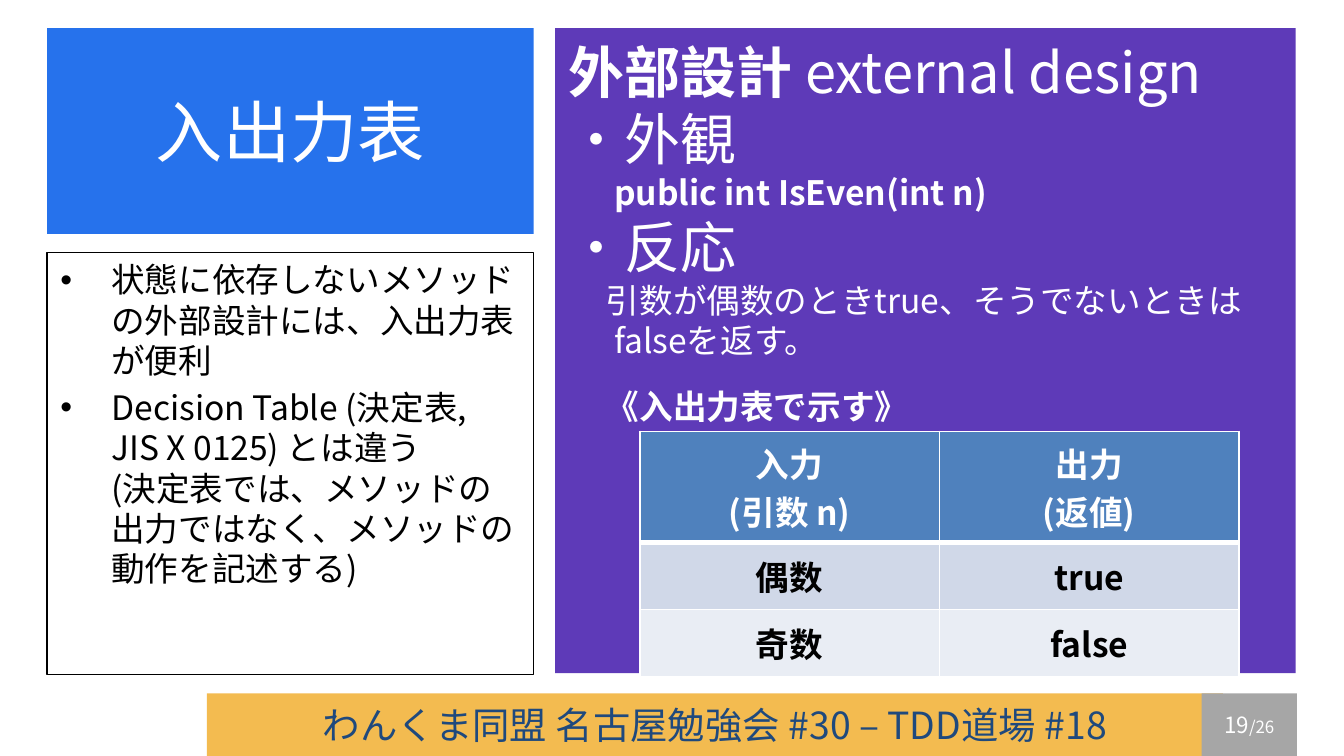
from dataclasses import dataclass
from typing import Any

from lxml.etree import SubElement
from pptx import Presentation
from pptx.dml.color import RGBColor
from pptx.enum.shapes import MSO_SHAPE as Kind
from pptx.enum.text import MSO_ANCHOR as Anchor, MSO_AUTO_SIZE as Fit, PP_ALIGN as Align
from pptx.oxml.ns import qn
from pptx.util import Inches, Pt

WHITE = RGBColor(0xFF, 0xFF, 0xFF)
BLACK = RGBColor(0x00, 0x00, 0x00)
NAVY = RGBColor(0x1F, 0x49, 0x7D)
BLUE = RGBColor(0x26, 0x72, 0xEC)
PURPLE = RGBColor(0x5E, 0x3A, 0xB8)
AMBER = RGBColor(0xF3, 0xBB, 0x50)
GREY = RGBColor(0xA6, 0xA6, 0xA6)
STEEL = RGBColor(0x4F, 0x81, 0xBD)
PALE = RGBColor(0xD0, 0xD8, 0xE8)
LIGHT = RGBColor(0xE9, 0xED, 0xF4)

MID = {"alignment": Align.CENTER}
LEFT = {"alignment": Align.LEFT}


def apply(item, style):
    for key, value in style.items():
        setattr(item, key, value)


def fill(item, color):
    item.fill.solid()
    item.fill.fore_color.rgb = color


@dataclass
class Page:
    slide: Any
    font: str = "Noto Sans CJK JP"

    def run(self, para, text, size, color, bold=False):
        for i, line in enumerate(text.split("\n")):
            if i:
                para.add_line_break()
            run = para.add_run()
            run.text = line
            apply(run.font, {"name": self.font, "size": Pt(size), "bold": bold})
            run.font.color.rgb = color
            SubElement(run.font._element, qn("a:ea"), typeface=self.font)

    def para(self, frame, runs, color, style, left=0, bullet=False):
        first = frame.paragraphs[0]
        para = frame.add_paragraph() if first.runs else first
        props = para._p.get_or_add_pPr()
        if left:
            props.set("marL", str(Inches(left)))
            props.set("indent", str(Inches(-left if bullet else 0)))
        if bullet:
            SubElement(props, qn("a:buFont"), typeface="Arial")
            SubElement(props, qn("a:buChar"), char="•")
        apply(para, style)
        for text, size, *bold in runs:
            self.run(para, text, size, color, *bold)

    def place(self, shape, box, color, anchor):
        apply(shape, dict(zip(("left", "top", "width", "height"), map(Inches, box))))
        fill(shape, color)
        frame = shape.text_frame
        apply(frame, {"word_wrap": True, "auto_size": Fit.NONE, "vertical_anchor": anchor})
        return frame

    def title(self, text, box, color):
        frame = self.place(self.slide.shapes.title, box, color, Anchor.MIDDLE)
        self.para(frame, [(text, 36)], WHITE, MID)

    def rect(self, box, color, anchor=Anchor.MIDDLE, edge=None):
        shape = self.slide.shapes.add_shape(Kind.RECTANGLE, *map(Inches, box))
        shape.shadow.inherit = False
        if edge is None:
            shape.line.fill.background()
        else:
            shape.line.color.rgb = edge
            shape.line.width = Pt(0.75)
        return self.place(shape, box, color, anchor)

    def border(self, cell, widths):
        props = cell._tc.get_or_add_tcPr()
        for i, (side, width) in enumerate(widths.items()):
            line = props.makeelement(qn("a:ln" + side), {"w": str(Pt(width))})
            paint = SubElement(line, qn("a:solidFill"))
            SubElement(paint, qn("a:srgbClr"), val=str(WHITE))
            props.insert(i, line)

    def table(self, box, rows, tall, fills):
        count = len(rows[0])
        table = self.slide.shapes.add_table(len(rows), count, *map(Inches, box)).table
        for col in table.columns:
            col.width = Inches(box[2] / count)
        for i, texts in enumerate(rows):
            table.rows[i].height = Inches(tall[i])
            for j, text in enumerate(texts):
                cell = table.cell(i, j)
                cell.vertical_anchor = Anchor.MIDDLE
                fill(cell, fills[i])
                ink = BLACK if i else WHITE
                self.para(cell.text_frame, [(text, 18, True)], ink, MID)
                self.border(cell, {"L": 1, "R": 1, "T": 3 if i == 1 else 1, "B": 1 if i else 3})


def main():
    deck = Presentation()
    apply(deck, {"slide_width": Inches(10), "slide_height": Inches(10 * 9 / 16)})
    page = Page(deck.slides.add_slide(deck.slide_layouts[5]))

    foot = page.rect((1.54, 5.16, 7.56, 0.47), AMBER)
    page.para(foot, [("わんくま同盟 名古屋勉強会 #30 – TDD道場 #18", 20)], NAVY, MID)
    num = page.rect((8.94, 5.16, 0.71, 0.47), GREY)
    page.para(num, [("19", 12), ("/26", 9)], WHITE, MID)

    page.title("入出力表", (0.35, 0.21, 3.62, 1.53), BLUE)

    notes = page.rect((0.35, 1.88, 3.62, 3.14), WHITE, Anchor.TOP, BLACK)
    points = (
        "状態に依存しないメソッドの外部設計には、入出力表が便利",
        "Decision Table (決定表, JIS X 0125) とは違う\n"
        "(決定表では、メソッドの出力ではなく、メソッドの動作を記述する)",
    )
    for i, text in enumerate(points):
        style = LEFT | ({"space_before": Pt(3.6)} if i else {})
        page.para(notes, [(text, 18)], BLACK, style, 0.38, True)

    panel = page.rect((4.13, 0.21, 5.51, 4.8), PURPLE, Anchor.TOP)
    panel.margin_top = Inches(0.07)
    lines = (
        ([("外部設計 ", 30, True), ("external design", 30)], 0, 0),
        ([("・外観", 30)], 0, 0),
        ([("public int IsEven(int n)", 18, True)], 0.34, 0),
        ([("・反応", 30)], 0, 0),
        ([("引数が偶数のときtrue、そうでないときは", 18)], 0.28, 0),
        ([("falseを返す。", 18)], 0.34, 0),
        ([("《入出力表で示す》", 18, True)], 0.28, 14),
    )
    for runs, left, gap in lines:
        style = LEFT | ({"space_before": Pt(gap)} if gap else {})
        page.para(panel, runs, WHITE, style, left)

    rows = (("入力\n(引数 n)", "出力\n(返値)"), ("偶数", "true"), ("奇数", "false"))
    page.table((4.76, 3.21, 4.46, 1.64), rows, (0.64, 0.5, 0.5), (STEEL, PALE, LIGHT))

    deck.save("out.pptx")


if __name__ == "__main__":
    main()
